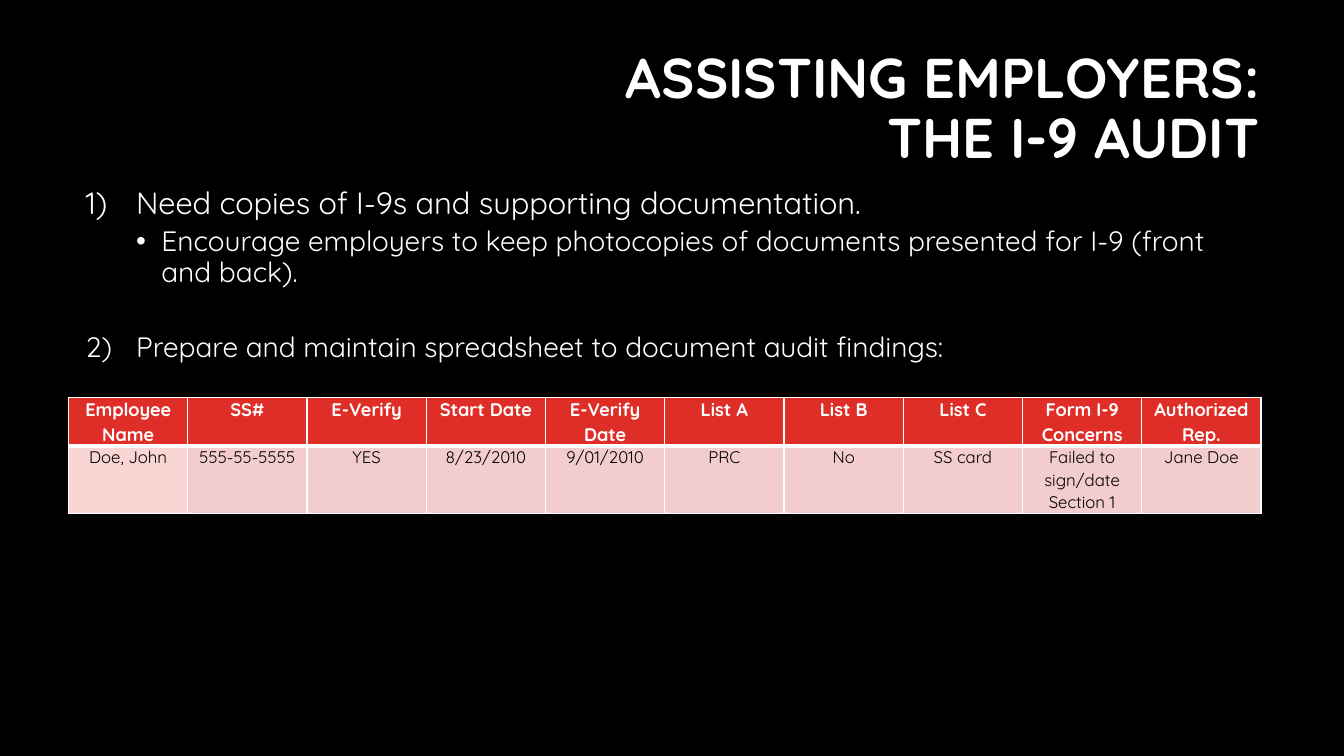
from dataclasses import dataclass

from lxml.etree import SubElement
from pptx import Presentation
from pptx.dml.color import RGBColor
from pptx.enum.text import MSO_ANCHOR as Anchor, MSO_AUTO_SIZE as AutoSize, PP_ALIGN as Align
from pptx.oxml import parse_xml
from pptx.oxml.ns import nsdecls, qn
from pptx.util import Inches, Pt

WHITE = RGBColor(0xFF, 0xFF, 0xFF)
BLACK = RGBColor(0x00, 0x00, 0x00)
RED = RGBColor(0xDF, 0x2E, 0x28)
ROSE = RGBColor(0xF3, 0xCD, 0xCD)
PALE_ROSE = RGBColor(0xF9, 0xD5, 0xD4)
TYPEFACE = "Quicksand"

SLIDE_WIDTH, SLIDE_HEIGHT = Inches(13.33), Inches(7.5)


@dataclass(frozen=True)
class Area:
    """A region in percent of the slide's width and height."""
    left: float
    top: float
    width: float
    height: float

    def box(self) -> dict:
        return {"left": across(self.left), "top": down(self.top),
                "width": across(self.width), "height": down(self.height)}


@dataclass(frozen=True)
class Step:
    text: str
    size: int
    level: int
    margin: float
    hanging: float
    space_before: int
    bullet: tuple[str, dict]


@dataclass(frozen=True)
class AuditField:
    heading: str
    finding: str


@dataclass(frozen=True)
class RowStyle:
    height: float
    font: dict
    lead_fill: RGBColor
    fill: RGBColor
    edges: dict


TITLE_AREA = Area(23.78, 5.2, 70.67, 18.8)
STEPS_AREA = Area(5.63, 24.13, 88.75, 66.67)
AUDIT_AREA = Area(5.1, 52.53, 88.75, 15.2)

STEPS = [
    Step("Need copies of I-9s and supporting documentation.", 22, 0, 0.5, -0.5, 0,
         ("a:buAutoNum", {"type": "arabicParenR"})),
    Step("Encourage employers to keep photocopies of documents presented for I-9 "
         "(front and back).", 20, 1, 0.75, -0.25, 5, ("a:buChar", {"char": "•"})),
    Step("Prepare and maintain spreadsheet to document audit findings:", 20, 1, 0.5, -0.5, 32,
         ("a:buAutoNum", {"type": "arabicParenR", "startAt": "2"})),
]

AUDIT_FIELDS = [
    AuditField("Employee Name", "Doe, John"),
    AuditField("SS#", "555-55-5555"),
    AuditField("E-Verify", "YES"),
    AuditField("Start Date", "8/23/2010"),
    AuditField("E-Verify Date", "9/01/2010"),
    AuditField("List A", "PRC"),
    AuditField("List B", "No"),
    AuditField("List C", "SS card"),
    AuditField("Form I-9 Concerns", "Failed to sign/date Section 1"),
    AuditField("Authorized Rep.", "Jane Doe"),
]

# Edge widths in points, in the order the cell format requires
HEADING_STYLE = RowStyle(6.27, {"size": Pt(13), "bold": True, "color": WHITE}, RED, RED,
                         {"lnL": 1, "lnR": 1, "lnT": 1, "lnB": 3})
FINDING_STYLE = RowStyle(8.93, {"size": Pt(12), "bold": False, "color": BLACK}, PALE_ROSE, ROSE,
                         {"lnL": 1, "lnR": 1, "lnT": 3, "lnB": 1})


def across(percent: float) -> int:
    return round(SLIDE_WIDTH * percent / 100)


def down(percent: float) -> int:
    return round(SLIDE_HEIGHT * percent / 100)


def assign(target, values: dict) -> None:
    for name, value in values.items():
        setattr(target, name, value)


def style_runs(paragraph, size: int, bold: bool, color: RGBColor) -> None:
    for run in paragraph.runs:
        assign(run.font, {"name": TYPEFACE, "size": size, "bold": bold})
        run.font.color.rgb = color


def write_title(title) -> None:
    assign(title, TITLE_AREA.box())
    assign(title.text_frame, {"text": "ASSISTING EMPLOYERS:\vTHE I-9 AUDIT", "word_wrap": True,
                              "vertical_anchor": Anchor.MIDDLE, "auto_size": AutoSize.NONE})
    heading = title.text_frame.paragraphs[0]
    assign(heading, {"alignment": Align.RIGHT, "line_spacing": 0.9})
    style_runs(heading, Pt(40), True, WHITE)


def write_steps(body, steps: list[Step]) -> None:
    assign(body, STEPS_AREA.box())
    frame = body.text_frame
    assign(frame, {"word_wrap": True, "vertical_anchor": Anchor.TOP, "auto_size": AutoSize.NONE})
    for index, step in enumerate(steps):
        line = frame.add_paragraph() if index else frame.paragraphs[0]
        assign(line, {"text": step.text, "level": step.level, "alignment": Align.LEFT,
                      "line_spacing": 0.9, "space_before": Pt(step.space_before),
                      "space_after": Pt(0)})
        properties = line._p.get_or_add_pPr()
        properties.set("marL", str(Inches(step.margin)))
        properties.set("indent", str(Inches(step.hanging)))
        tag, attributes = step.bullet
        SubElement(properties, qn(tag), attributes)
        style_runs(line, Pt(step.size), False, WHITE)


def draw_edges(cell, edges: dict) -> None:
    properties = cell._tc.get_or_add_tcPr()
    for position, (edge, points) in enumerate(edges.items()):
        properties.insert(position, parse_xml(
            f'<a:{edge} {nsdecls("a")} w="{Pt(points)}"><a:solidFill>'
            f'<a:srgbClr val="{WHITE}"/></a:solidFill></a:{edge}>'))


def fill_cell(cell, text: str, fill: RGBColor, style: RowStyle) -> None:
    assign(cell, {"text": text, "vertical_anchor": Anchor.TOP,
                  "margin_left": Inches(0.07), "margin_right": Inches(0.07),
                  "margin_top": 0, "margin_bottom": 0})
    cell.fill.solid()
    cell.fill.fore_color.rgb = fill
    draw_edges(cell, style.edges)
    entry = cell.text_frame.paragraphs[0]
    assign(entry, {"alignment": Align.CENTER, "line_spacing": 1.07})
    style_runs(entry, **style.font)


def add_audit_table(slide, fields: list[AuditField]) -> None:
    audit = slide.shapes.add_table(2, len(fields), **AUDIT_AREA.box()).table
    for column in audit.columns:
        column.width = across(AUDIT_AREA.width / len(fields))
    rows = [(HEADING_STYLE, [field.heading for field in fields]),
            (FINDING_STYLE, [field.finding for field in fields])]
    for row, (style, entries) in zip(audit.rows, rows):
        row.height = down(style.height)
        for index, (cell, text) in enumerate(zip(row.cells, entries)):
            fill_cell(cell, text, style.fill if index else style.lead_fill, style)


def main() -> None:
    deck = Presentation()
    assign(deck, {"slide_width": SLIDE_WIDTH, "slide_height": SLIDE_HEIGHT})
    slide = deck.slides.add_slide(deck.slide_layouts[1])

    # Black backdrop
    slide.background.fill.solid()
    slide.background.fill.fore_color.rgb = BLACK

    # Title, numbered steps and sample spreadsheet
    write_title(slide.shapes.title)
    write_steps(slide.placeholders[1], STEPS)
    add_audit_table(slide, AUDIT_FIELDS)

    deck.save("out.pptx")


if __name__ == "__main__":
    main()
